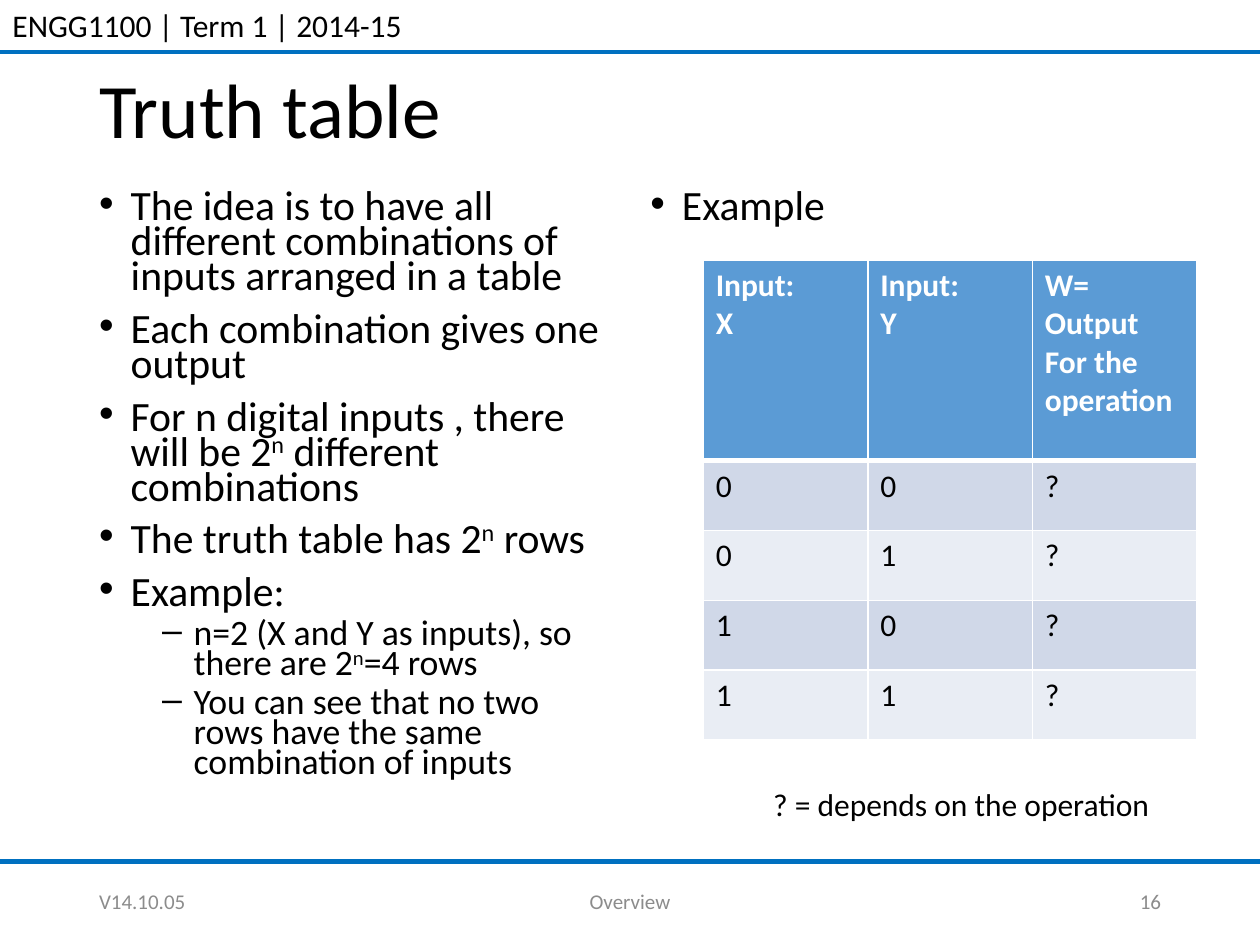
from dataclasses import dataclass

from lxml import etree
from pptx import Presentation
from pptx.dml.color import RGBColor
from pptx.enum.shapes import MSO_CONNECTOR
from pptx.enum.text import MSO_ANCHOR, MSO_AUTO_SIZE, PP_ALIGN
from pptx.oxml.ns import qn
from pptx.util import Inches, Pt

LEFT, MID, RIGHT = PP_ALIGN.LEFT, PP_ALIGN.CENTER, PP_ALIGN.RIGHT
TOP, CENTER = MSO_ANCHOR.TOP, MSO_ANCHOR.MIDDLE
FIXED = MSO_AUTO_SIZE.NONE
STRAIGHT = MSO_CONNECTOR.STRAIGHT

BLACK = RGBColor(0, 0, 0)
WHITE = RGBColor(255, 255, 255)
GRAY = RGBColor(0x8C, 0x8C, 0x8C)
BLUE = RGBColor(0, 0x70, 0xC0)
HEAD = RGBColor(0x5B, 0x9B, 0xD5)
BANDS = RGBColor(0xE9, 0xED, 0xF4), RGBColor(0xD0, 0xD8, 0xE8)

FONT = "Calibri"
COLS, ROWS = 160, 120
WIDE, HIGH = Inches(10), Inches(7.5)


@dataclass(frozen=True)
class Box:
    col: float
    row: float
    cols: float
    rows: float

    def spot(self) -> tuple[int, int, int, int]:
        return across(self.col), down(self.row), across(self.cols), down(self.rows)


@dataclass(frozen=True)
class Label:
    text: str
    box: Box
    size: float = 18
    color: RGBColor = BLACK
    align: PP_ALIGN = LEFT
    anchor: MSO_ANCHOR = TOP
    wrap: bool = False


@dataclass(frozen=True)
class Item:
    text: str
    level: int = 0


@dataclass(frozen=True)
class Style:
    size: float
    before: float
    indent: float
    mark: str


@dataclass(frozen=True)
class Rule:
    row: float
    width: float


STYLES = Style(23.8, 10, 0.25, "•"), Style(20.4, 5, 0.75, "–")
RULES = Rule(6.56, 2.25), Rule(109.4, 3)
TITLE = Box(11, 6.4, 138, 16)
LISTS = [
    (Box(11, 23.7, 68, 84.3), [
        Item("The idea is to have all different combinations of inputs arranged in a table"),
        Item("Each combination gives one output"),
        Item("For n digital inputs , there will be 2^n^ different combinations"),
        Item("The truth table has 2^n^ rows"),
        Item("Example:"),
        Item("n=2 (X and Y as inputs), so there are 2^n^=4 rows", 1),
        Item("You can see that no two rows have the same combination of inputs", 1),
    ]),
    (Box(81, 23.7, 68, 84.3), [Item("Example")]),
]
LABELS = [
    Label("ENGG1100 | Term 1 | 2014-15", Box(0, 0, 53.3, 6.4)),
    Label("V14.10.05", Box(11, 111.2, 36, 6.4), 12, GRAY, LEFT, CENTER, True),
    Label("Overview", Box(53, 111.2, 54, 6.4), 12, GRAY, MID, CENTER, True),
    Label("16", Box(113, 111.2, 36, 6.4), 12, GRAY, RIGHT, CENTER, True),
    Label("? = depends on the operation", Box(96.6, 98.9, 51.7, 6.4)),
]
GRID = Box(89.3, 33, 62.7, 61)
HEADROW = 25.5
CELLS = [["Input:\nX", "Input:\nY", "W=\nOutput\nFor the operation"]]
CELLS += [[x, y, "?"] for x in "01" for y in "01"]


def across(cols: float) -> int:
    return round(WIDE * cols / COLS)


def down(rows: float) -> int:
    return round(HIGH * rows / ROWS)


def place(shape, box: Box) -> None:
    shape.left, shape.top, shape.width, shape.height = box.spot()


def ink(font, size: float, color: RGBColor, bold: bool = False) -> None:
    font.name, font.size, font.bold = FONT, Pt(size), bold
    font.color.rgb = color


def draw_rule(slide, rule: Rule) -> None:
    y = down(rule.row)
    line = slide.shapes.add_connector(STRAIGHT, 0, y, WIDE, y)
    line.line.color.rgb = BLUE
    line.line.width = Pt(rule.width)
    etree.SubElement(line._element.spPr, qn("a:effectLst"))


def draw_label(slide, label: Label) -> None:
    frame = slide.shapes.add_textbox(*label.box.spot()).text_frame
    frame.text = label.text
    frame.word_wrap, frame.vertical_anchor = label.wrap, label.anchor
    para = frame.paragraphs[0]
    para.alignment = label.align
    ink(para.runs[0].font, label.size, label.color)


def draw_title(shape, text: str) -> None:
    place(shape, TITLE)
    frame = shape.text_frame
    frame.text = text
    frame.auto_size, frame.vertical_anchor = FIXED, CENTER
    para = frame.paragraphs[0]
    para.alignment, para.line_spacing = LEFT, 0.9
    ink(para.runs[0].font, 44, BLACK)


def fill_item(para, item: Item) -> None:
    style = STYLES[item.level]
    para.level = item.level
    para.line_spacing, para.space_before = 0.7, Pt(style.before)
    props = para._p.get_or_add_pPr()
    props.set("marL", str(Inches(style.indent)))
    props.set("indent", str(-Inches(0.25)))
    etree.SubElement(props, qn("a:buFont"), typeface="Arial")
    etree.SubElement(props, qn("a:buChar"), char=style.mark)
    for turn, part in enumerate(item.text.split("^")):
        run = para.add_run()
        run.text = part
        ink(run.font, style.size, BLACK)
        if turn % 2:
            run._r.get_or_add_rPr().set("baseline", "30000")


def draw_list(shape, box: Box, items: list[Item]) -> None:
    place(shape, box)
    frame = shape.text_frame
    frame.auto_size = FIXED
    for index, item in enumerate(items):
        fill_item(frame.add_paragraph() if index else frame.paragraphs[0], item)


def edge(cell, side: str, width: float, order: int) -> None:
    line = etree.Element(qn(f"a:ln{side}"), w=str(Pt(width)))
    fill = etree.SubElement(line, qn("a:solidFill"))
    etree.SubElement(fill, qn("a:srgbClr"), val=str(WHITE))
    cell._tc.get_or_add_tcPr().insert(order, line)


def fill_cell(cell, text: str, row: int) -> None:
    cell.text = text
    cell.fill.solid()
    cell.fill.fore_color.rgb = BANDS[row % 2] if row else HEAD
    for para in cell.text_frame.paragraphs:
        ink(para.runs[0].font, 18, BLACK if row else WHITE, not row)
    widths = {"L": 1, "R": 1, "T": 3 if row == 1 else 1, "B": 1 if row else 3}
    for order, (side, width) in enumerate(widths.items()):
        edge(cell, side, width, order)


def draw_table(slide) -> None:
    count = len(CELLS)
    table = slide.shapes.add_table(count, len(CELLS[0]), *GRID.spot()).table
    for row, texts in enumerate(CELLS):
        height = (GRID.rows - HEADROW) / (count - 1) if row else HEADROW
        table.rows[row].height = down(height)
        for col, text in enumerate(texts):
            fill_cell(table.cell(row, col), text, row)


def main() -> None:
    deck = Presentation()
    deck.slide_width, deck.slide_height = WIDE, HIGH
    slide = deck.slides.add_slide(deck.slide_layouts[3])
    for rule in RULES:
        draw_rule(slide, rule)
    draw_title(slide.shapes.title, "Truth table")
    for index, (box, items) in enumerate(LISTS, 1):
        draw_list(slide.placeholders[index], box, items)
    draw_table(slide)
    for label in LABELS:
        draw_label(slide, label)
    deck.save("out.pptx")


if __name__ == "__main__":
    main()
